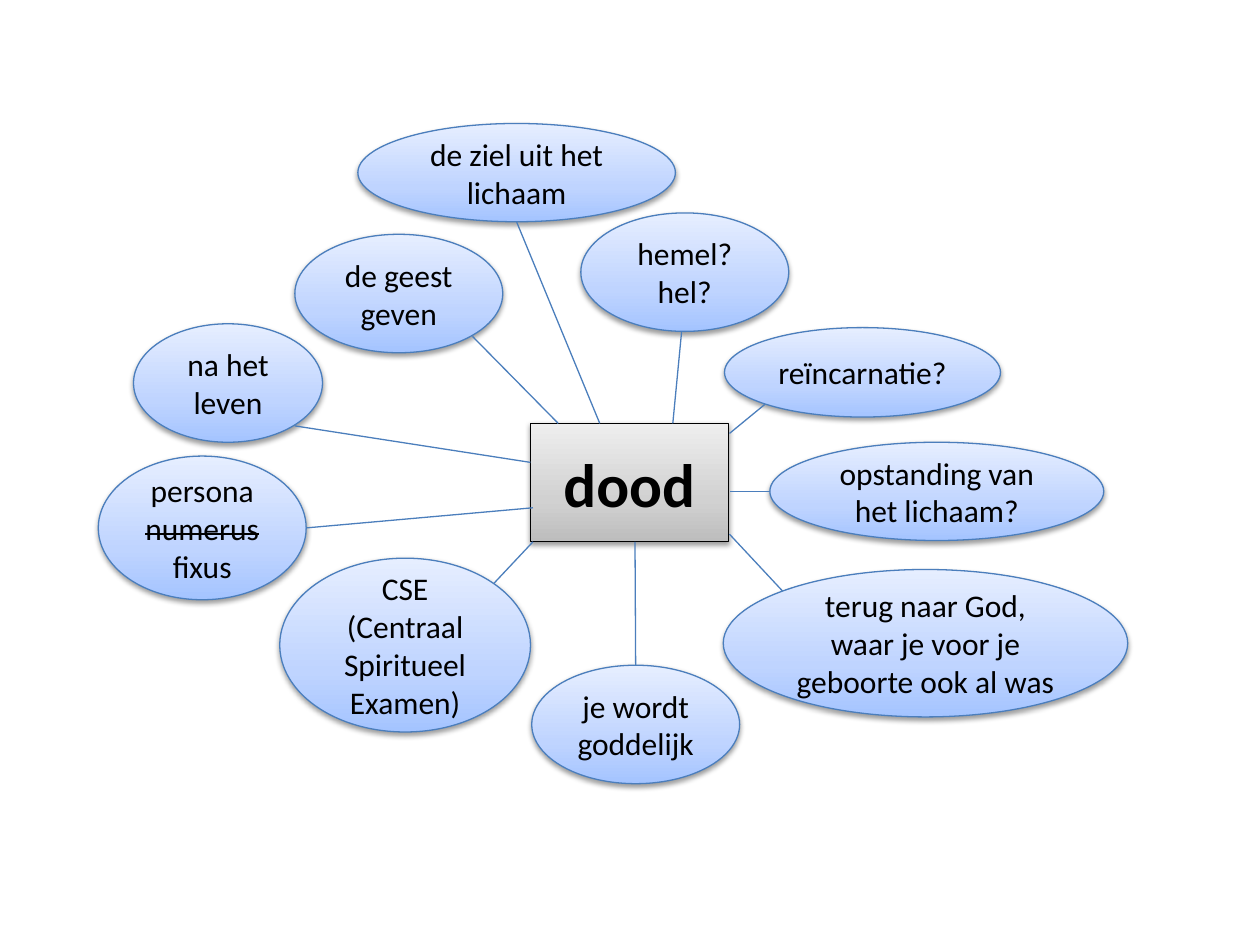
"""Build a mind map slide of ideas around the word "dood"."""
import pptx
import pptx.dml.color
import pptx.enum.shapes
import pptx.enum.text
import pptx.oxml
import pptx.oxml.ns
import pptx.util
from pptx.util import Inches

COLOURS = {"text": "000000", "shadow": "000000", "centre_line": "000000", "idea_line": "4B7EBC"}
GRADIENTS = {
    "centre": {0: "BDBDBD", 35: "D1D1D1", 100: "EEEEEE"},
    "idea": {0: "A4C4FF", 35: "BFD4FF", 100: "E6EEFF"},
}
SHAPES = pptx.enum.shapes.MSO_SHAPE
CENTRE = (4.21, 3.36, 1.57, 0.94)
IDEAS = [
    ("na het leven", (1.06, 2.57, 1.5, 0.94), (2.34, 3.38), (4.21, 3.67)),
    ("de geest geven", (2.34, 1.86, 1.65, 0.94), (3.75, 2.67), (4.43, 3.36)),
    ("de ziel uit het lichaam", (2.84, 0.98, 2.52, 0.78), (4.1, 1.76), (4.76, 3.36)),
    ("hemel?\nhel?", (4.61, 1.69, 1.65, 0.94), (5.41, 2.63), (5.34, 3.36)),
    ("reïncarnatie?", (5.75, 2.6, 2.19, 0.71), (6.07, 3.21), (5.79, 3.44)),
    ("opstanding van het lichaam?", (6.11, 3.51, 2.65, 0.78), (6.11, 3.9), (5.79, 3.9)),
    ("terug naar God, waar je voor je geboorte ook al was",
     (5.74, 4.52, 3.21, 1.17), (6.21, 4.69), (5.79, 4.24)),
    ("je wordt goddelijk", (4.22, 5.28, 1.65, 0.94), (5.04, 5.28), (5.04, 4.3)),
    ("CSE\n(Centraal Spiritueel Examen)", (2.22, 4.43, 1.99, 1.38), (3.92, 4.63), (4.23, 4.3)),
    ("persona\vnumerus fixus", (0.78, 3.62, 1.65, 1.14), (2.43, 4.19), (4.23, 4.03)),
]
STRUCK_WORD = "numerus"


def rgb(name):
    """Return the named colour."""
    return pptx.dml.color.RGBColor.from_string(COLOURS[name])


def add_xml(parent, markup):
    """Append a DrawingML fragment to an element."""
    space = pptx.oxml.ns.nsdecls("a")
    parent.append(pptx.oxml.parse_xml(markup.replace(" ", f" {space} ", 1)))


def set_line(line, colour):
    """Give an outline or connector its thin coloured line."""
    line.color.rgb = rgb(colour)
    line.width = pptx.util.Pt(0.75)


def set_gradient(shape, stops):
    """Fill a shape with a gradient that rises from bottom to top."""
    shape.fill.gradient()
    shape.fill.gradient_angle = 90
    stop_list = shape._element.spPr.find(".//" + pptx.oxml.ns.qn("a:gsLst"))
    for stop in list(stop_list):
        stop_list.remove(stop)
    for position, colour in stops.items():
        add_xml(stop_list, f'<a:gs pos="{position * 1000}"><a:srgbClr val="{colour}"/></a:gs>')


def set_shadow(shape):
    """Add a soft shadow below a shape."""
    shape.shadow.inherit = False
    effects = shape._element.spPr.find(pptx.oxml.ns.qn("a:effectLst"))
    blur, distance = pptx.util.Pt(3.1), pptx.util.Pt(1.6)
    add_xml(effects, f'<a:outerShdw blurRad="{blur}" dist="{distance}" dir="5400000" rotWithShape="0">'
                     f'<a:srgbClr val="{COLOURS["shadow"]}"><a:alpha val="38000"/></a:srgbClr></a:outerShdw>')


def add_span(para, text, size, bold=False, strike=False):
    """Add one formatted run."""
    span = para.add_run()
    span.text = text
    span.font.name = "Calibri"
    span.font.size = pptx.util.Pt(size)
    span.font.bold = bold
    span.font.color.rgb = rgb("text")
    if strike:
        span.font._element.set("strike", "sngStrike")


def write_text(shape, text, size=18, bold=False, struck=STRUCK_WORD):
    """Write centred paragraphs, striking out one word where it occurs."""
    frame = shape.text_frame
    frame.word_wrap = True
    frame.vertical_anchor = pptx.enum.text.MSO_ANCHOR.MIDDLE
    for number, content in enumerate(text.split("\n")):
        para = frame.add_paragraph() if number else frame.paragraphs[0]
        para.alignment = pptx.enum.text.PP_ALIGN.CENTER
        for row, line in enumerate(content.split("\v")):
            if row:
                para.add_line_break()
            for part in filter(None, line.partition(struck)):
                add_span(para, part, size, bold=bold, strike=part == struck)


def add_box(page, kind, place, style, text, **text_format):
    """Add a shaded shape with text."""
    box = page.shapes.add_shape(kind, *map(Inches, place))
    set_gradient(box, GRADIENTS[style])
    set_line(box.line, f"{style}_line")
    set_shadow(box)
    write_text(box, text, **text_format)
    return box


def add_link(page, idea, start, end):
    """Draw a line from an idea towards the centre."""
    link = page.shapes.add_connector(
        pptx.enum.shapes.MSO_CONNECTOR.STRAIGHT, *map(Inches, start + end))
    set_line(link.line, "idea_line")
    add_xml(link._element.spPr, "<a:effectLst />")
    if start[1] == idea.top / Inches(1):
        link.begin_connect(idea, 0)


def main():
    """Build and save the slide."""
    deck = pptx.Presentation()
    deck.slide_width, deck.slide_height = Inches(10), Inches(7.5)
    page = deck.slides.add_slide(deck.slide_layouts[6])
    add_box(page, SHAPES.RECTANGLE, CENTRE, "centre", "dood", size=35, bold=True)
    for text, place, start, end in IDEAS:
        idea = add_box(page, SHAPES.OVAL, place, "idea", text)
        add_link(page, idea, start, end)
    deck.save("out.pptx")


if __name__ == "__main__":
    main()
